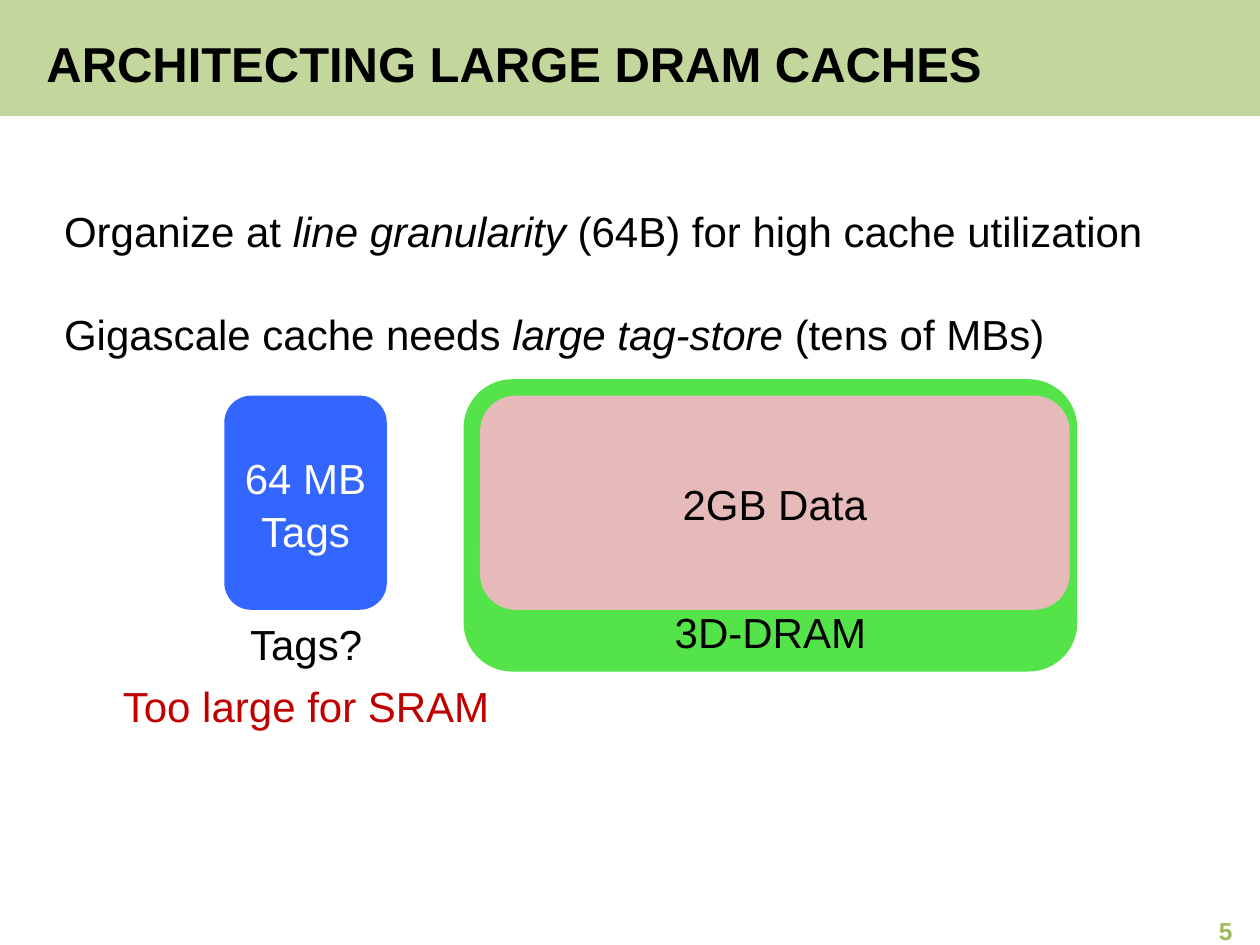
from pptx import Presentation
from pptx import util as u
from pptx.dml.color import RGBColor
from pptx.enum import shapes, text

COLORS = {"band": "C3D69B", "dram": "54E44A", "data": "E6BAB8", "tags": "3365FF",
          "black": "000000", "white": "FFFFFF", "warning": "C00000", "number": "9BBB59"}
LINE_SPACING = 1.05
ALIGN = text.PP_ALIGN
ANCHOR = text.MSO_ANCHOR


def write(shape, lines, color="black", size=24, bold=False, align=ALIGN.CENTER,
          anchor=ANCHOR.MIDDLE, wrap=True, gap=0):
    """Fill a shape with lines, each a list of (words, italic) runs or a string."""
    frame = shape.text_frame
    frame.word_wrap = wrap
    frame.vertical_anchor = anchor
    for index, line in enumerate(lines):
        paragraph = frame.add_paragraph() if index else frame.paragraphs[0]
        paragraph.alignment = align
        paragraph.line_spacing = LINE_SPACING
        paragraph.space_before = u.Pt(gap if index else 0)
        font = paragraph.font
        font.name, font.size, font.bold = "Arial", u.Pt(size), bold
        font.color.rgb = RGBColor.from_string(COLORS[color])
        for words, italic in [(line, False)] if isinstance(line, str) else line:
            run = paragraph.add_run()
            run.text = words
            if italic:
                run.font.italic = True


def add_box(slide, left, top, width, height, fill, kind=shapes.MSO_SHAPE.ROUNDED_RECTANGLE):
    shape = slide.shapes.add_shape(kind, *map(u.Inches, (left, top, width, height)))
    shape.shadow.inherit = False
    shape.fill.solid()
    shape.fill.fore_color.rgb = RGBColor.from_string(COLORS[fill])
    shape.line.fill.background()
    return shape


def add_text(slide, left, top, width, height, lines, **style):
    box = slide.shapes.add_textbox(*map(u.Inches, (left, top, width, height)))
    write(box, lines, **style)


def add_header(slide, left, top, width, height):
    add_box(slide, left, top, width, height, "band", shapes.MSO_SHAPE.RECTANGLE)
    add_text(slide, left + 0.27, top + 0.22, 9.61, 0.53, ["ARCHITECTING LARGE DRAM CACHES"],
             size=28, bold=True, align=ALIGN.LEFT)


def add_points(slide, left, top, width, height):
    points = [
        [("Organize at ", False), ("line granularity ", True),
         ("(64B) for high cache utilization", False)],
        [("Gigascale cache needs ", False), ("large tag-store ", True),
         ("(tens of MBs)", False)],
    ]
    add_text(slide, left, top, width, height, points,
             align=ALIGN.LEFT, anchor=ANCHOR.TOP, gap=29)


def add_tag_store(slide, left, top, width, height):
    write(add_box(slide, left, top, width, height, "tags"), ["64 MB", "Tags"], color="white")
    # Captions under the block
    bottom = top + height
    add_text(slide, left + 0.1, bottom, 1.1, 0.5, ["Tags?"], anchor=ANCHOR.TOP, wrap=False)
    add_text(slide, left - 0.92, bottom + 0.49, 3.14, 0.5, ["Too large for SRAM"],
             color="warning", anchor=ANCHOR.TOP, wrap=False)


def add_dram(slide, left, top, width, height):
    dram = add_box(slide, left, top, width, height, "dram")
    dram.text_frame.margin_bottom = 0
    write(dram, ["3D-DRAM"], anchor=ANCHOR.BOTTOM)
    data = add_box(slide, left + 0.13, top + 0.13, width - 0.19, height - 0.62, "data")
    write(data, ["2GB Data"])


def main():
    presentation = Presentation()
    presentation.slide_width, presentation.slide_height = u.Inches(10), u.Inches(7.5)
    slide = presentation.slides.add_slide(presentation.slide_layouts[6])
    add_header(slide, 0, 0, 10, 0.92)
    add_points(slide, 0.41, 1.56, 9.48, 1.31)
    add_dram(slide, 3.68, 3.01, 4.87, 2.32)
    add_tag_store(slide, 1.78, 3.14, 1.29, 1.7)
    # Page number
    add_text(slide, 7.55, 7.25, 2.33, 0.26, ["5"], color="number", size=14, bold=True,
             align=ALIGN.RIGHT)
    presentation.save("out.pptx")


if __name__ == "__main__":
    main()
